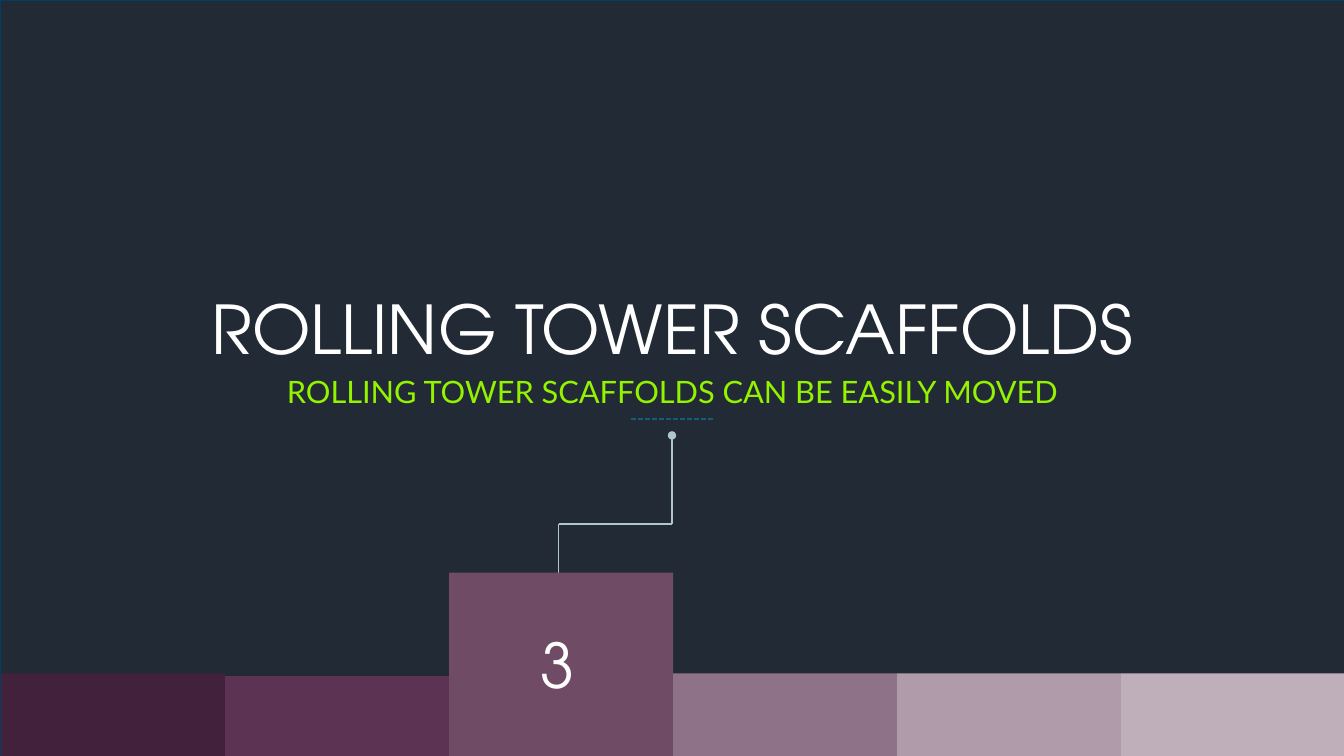
import pptx
import pptx.dml.color
import pptx.enum.dml
import pptx.enum.shapes
import pptx.enum.text
import pptx.oxml
import pptx.oxml.ns
import pptx.util

Pt = pptx.util.Pt
COLORS = {
    "backdrop": "222A35",
    "border": "003F5F",
    "connector": "AFC6D1",
    "dash": "125D79",
    "title": "FFFFFF",
    "subtitle": "93F300",
    "number": "FFFFFF",
    "active": "6F4B65",
}
TILES = [
    ("42213D", 59),
    ("5C3352", 57),
    (COLORS["active"], 131),
    ("8E7287", 59),
    ("AF9BAA", 59),
    ("BFAFBB", 59),
]
WIDTH, HEIGHT, TILE_WIDTH = 960, 540, 160


def rgb(color):
    """Return the colour object for a hex string."""
    return pptx.dml.color.RGBColor.from_string(color)


def add_rect(s, left, top, width, height, fill, border=None):
    """Add a flat rectangle, outlined only when a border colour is given."""
    sp = s.shapes.add_shape(
        pptx.enum.shapes.MSO_SHAPE.RECTANGLE,
        Pt(left), Pt(top), Pt(width), Pt(height))
    sp.shadow.inherit = False
    sp.fill.solid()
    sp.fill.fore_color.rgb = rgb(fill)
    if border:
        sp.line.color.rgb = rgb(border)
        sp.line.width = Pt(0.5)
    else:
        sp.line.fill.background()
    return sp


def add_line(s, x1, y1, x2, y2, color, dashed=False, dot=False):
    """Add a straight line, optionally dashed or starting with a dot."""
    cxn = s.shapes.add_connector(
        pptx.enum.shapes.MSO_CONNECTOR.STRAIGHT, Pt(x1), Pt(y1), Pt(x2), Pt(y2))
    cxn.line.color.rgb = rgb(color)
    cxn.line.width = Pt(1.25)
    if dashed:
        cxn.line.dash_style = pptx.enum.dml.MSO_LINE.SQUARE_DOT
    sp_pr = cxn.element.spPr
    if dot:
        head = pptx.oxml.parse_xml(
            f'<a:headEnd {pptx.oxml.ns.nsdecls("a")} type="oval"/>')
        sp_pr.find(pptx.oxml.ns.qn("a:ln")).append(head)
    sp_pr.append(pptx.oxml.parse_xml(
        f'<a:effectLst {pptx.oxml.ns.nsdecls("a")}/>'))


def set_text(sp, box, text, size, font, color, centered=True, wrap=True):
    """Place a shape at the given box and fill it with one formatted line."""
    sp.left, sp.top, sp.width, sp.height = map(Pt, box)
    tf = sp.text_frame
    tf.text = text
    tf.word_wrap = wrap
    tf.auto_size = pptx.enum.text.MSO_AUTO_SIZE.SHAPE_TO_FIT_TEXT
    tf.vertical_anchor = pptx.enum.text.MSO_ANCHOR.TOP
    p = tf.paragraphs[0]
    align = pptx.enum.text.PP_ALIGN
    p.alignment = align.CENTER if centered else align.LEFT
    p.space_before = Pt(0)
    p.font.size = Pt(size)
    p.font.name = font
    p.font.color.rgb = rgb(color)


def main():
    """Build the section slide and save it."""
    prs = pptx.Presentation()
    prs.slide_width, prs.slide_height = Pt(WIDTH), Pt(HEIGHT)
    s = prs.slides.add_slide(prs.slide_layouts[0])
    title, subtitle = s.placeholders

    backdrop = add_rect(
        s, 0, 0, WIDTH, HEIGHT, COLORS["backdrop"], COLORS["border"])
    title.element.addprevious(backdrop.element)

    set_text(title, (139, 201.6, 682.6, 65.5), "ROLLING TOWER SCAFFOLDS",
             48, "TeX Gyre Adventor", COLORS["title"], wrap=False)
    set_text(subtitle, (167.8, 262.8, 625, 35.3),
             "ROLLING TOWER SCAFFOLDS CAN BE EASILY MOVED",
             22, "Lato", COLORS["subtitle"])

    add_line(s, 450.7, 299.5, 509, 299.5, COLORS["dash"], dashed=True)
    add_line(s, 480, 311, 480, 374.5, COLORS["connector"], dot=True)
    add_line(s, 399, 374.5, 480, 374.5, COLORS["connector"])
    add_line(s, 399, 374.5, 399, 409, COLORS["connector"])

    for i, (color, height) in enumerate(TILES):
        add_rect(s, i * TILE_WIDTH + 0.8, HEIGHT - height,
                 TILE_WIDTH, height, color)

    number = add_rect(s, 378.7, 444.2, 74.2, 60.5, COLORS["active"])
    set_text(number, (378.7, 444.2, 74.2, 60.5), "3",
             44, "TeX Gyre Adventor", COLORS["number"], centered=False)

    prs.save("out.pptx")


if __name__ == "__main__":
    main()
